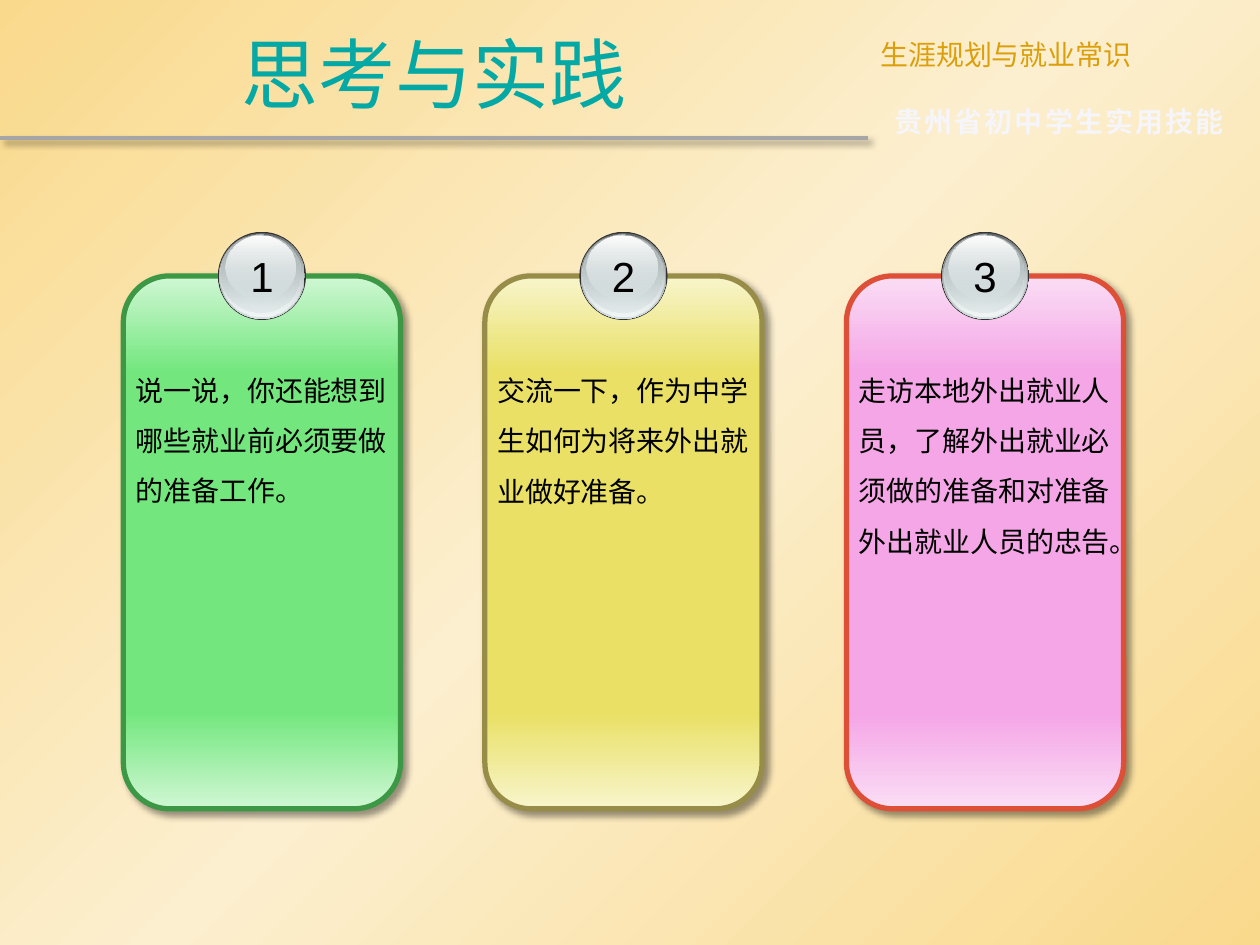
from lxml.etree import SubElement
from pptx import Presentation
from pptx.dml.color import RGBColor
from pptx.enum.shapes import MSO_CONNECTOR, MSO_SHAPE
from pptx.enum.text import MSO_ANCHOR, MSO_AUTO_SIZE, PP_ALIGN
from pptx.oxml.ns import qn
from pptx.util import Pt

CHINESE_FONT = "Noto Sans CJK SC"
BLACK = RGBColor(0x00, 0x00, 0x00)
WHITE = RGBColor(0xFF, 0xFF, 0xFF)
TEAL = RGBColor(0x04, 0xA8, 0xA4)
AMBER = RGBColor(0xDC, 0x9F, 0x0C)
PALE = RGBColor(0xF5, 0xF5, 0xFA)
RULE_GRAY = RGBColor(0xA6, 0xA6, 0xA6)
SAND = RGBColor(0xF9, 0xD9, 0x8C)
CREAM = RGBColor(0xFC, 0xEF, 0xCF)
RIM = RGBColor(0x33, 0x33, 0x33)
STEEL = RGBColor(0x63, 0x68, 0x69)
SILVER = RGBColor(0xAA, 0xB2, 0xB3)
MIST = RGBColor(0xD6, 0xE1, 0xE2)
FROST = RGBColor(0xF1, 0xF5, 0xF5)
LIGHT_GREEN = RGBColor(0xD0, 0xF7, 0xD4)
GREEN = RGBColor(0x73, 0xE7, 0x7E)
DARK_GREEN = RGBColor(0x3C, 0x98, 0x44)
LIGHT_YELLOW = RGBColor(0xF8, 0xF5, 0xCC)
YELLOW = RGBColor(0xE9, 0xE0, 0x65)
OLIVE = RGBColor(0x97, 0x8D, 0x48)
LIGHT_PINK = RGBColor(0xFB, 0xDD, 0xF5)
PINK = RGBColor(0xF4, 0xA6, 0xE6)
RED = RGBColor(0xDD, 0x4F, 0x37)


def set_gradient(fill, element, angle, stops):
    fill.gradient()
    fill.gradient_angle = 360 - angle
    stop_list = element.find(".//" + qn("a:gsLst"))
    for old_stop in list(stop_list):
        stop_list.remove(old_stop)
    for position, color, opacity in stops:
        stop = SubElement(stop_list, qn("a:gs"), pos=str(position * 1000))
        color_element = SubElement(stop, qn("a:srgbClr"), val=str(color))
        if opacity < 100:
            SubElement(color_element, qn("a:alpha"), val=str(opacity * 1000))


def write_text(shape, text, color, size, frame_format, paragraph_format, font_name=CHINESE_FONT):
    frame = shape.text_frame
    frame.text = text
    paragraph = frame.paragraphs[0]
    run = paragraph.runs[0]
    run.font.color.rgb = color
    font_format = {"size": Pt(size), "name": font_name}
    for target, values in (
        (frame, {"word_wrap": True, "auto_size": MSO_AUTO_SIZE.SHAPE_TO_FIT_TEXT, **frame_format}),
        (paragraph, paragraph_format),
        (run.font, font_format),
    ):
        for name, value in values.items():
            setattr(target, name, value)
    properties = run._r.get_or_add_rPr()
    SubElement(properties, qn("a:ea"), typeface=font_name)
    return run


presentation = Presentation()
presentation.slide_width = Pt(720)
presentation.slide_height = Pt(540)
slide = presentation.slides.add_slide(presentation.slide_layouts[5])
set_gradient(slide.background.fill, slide.element, 45,
             [(0, SAND, 100), (50, CREAM, 100), (100, SAND, 100)])

title = slide.shapes.title
title_box = {"left": Pt(0), "top": Pt(5), "width": Pt(496), "height": Pt(73.5)}
for name, value in title_box.items():
    setattr(title, name, value)
write_text(title, "思考与实践", TEAL, 44,
           {"auto_size": MSO_AUTO_SIZE.NONE, "vertical_anchor": MSO_ANCHOR.MIDDLE},
           {"alignment": PP_ALIGN.CENTER})

rule = slide.shapes.add_connector(MSO_CONNECTOR.STRAIGHT, Pt(0), Pt(79), Pt(496), Pt(79))
rule.line.color.rgb = RULE_GRAY
rule.line.width = Pt(2.25)
shadowed = [rule]

course = slide.shapes.add_textbox(Pt(496), Pt(18), Pt(224), Pt(26.6))
write_text(course, "生涯规划与就业常识", AMBER, 16, {}, {"alignment": PP_ALIGN.JUSTIFY})
series = slide.shapes.add_textbox(Pt(504), Pt(56), Pt(216), Pt(26.6))
series_run = write_text(series, "贵州省初中学生实用技能", PALE, 16, {}, {})
series_run.font.bold = True
series_run._r.get_or_add_rPr().set("spc", "130")

CARD_LEFT, CARD_STEP, CARD_TOP, CARD_WIDTH, CARD_HEIGHT = 70.5, 206.6, 157.7, 158.4, 304.5
CARDS = [
    ("说一说，你还能想到哪些就业前必须要做的准备工作。", LIGHT_GREEN, GREEN, DARK_GREEN, 91.4),
    ("交流一下，作为中学生如何为将来外出就业做好准备。", LIGHT_YELLOW, YELLOW, OLIVE, 94.3),
    ("走访本地外出就业人员，了解外出就业必须做的准备和对准备外出就业人员的忠告。",
     LIGHT_PINK, PINK, RED, 120.2),
]
BADGE_LAYERS = [
    (54, 132.5, 50.4, 50.4, [(0, RIM, 100), (100, RIM, 100)]),
    (54.7, 133.2, 49, 49, [(0, STEEL, 100), (100, MIST, 100)]),
    (55.2, 133.2, 47.5, 47.5, [(0, MIST, 0), (100, FROST, 100)]),
    (55.8, 133.9, 45.4, 44.6, [(0, SILVER, 100), (100, MIST, 48)]),
    (58.3, 134.6, 40.3, 36, [(0, WHITE, 100), (100, MIST, 38)]),
]

for index, (text, edge_color, body_color, border_color, text_height) in enumerate(CARDS):
    left = CARD_LEFT + index * CARD_STEP
    shapes = slide.shapes.add_group_shape().shapes

    card = shapes.add_shape(MSO_SHAPE.ROUNDED_RECTANGLE, Pt(left), Pt(CARD_TOP),
                            Pt(CARD_WIDTH), Pt(CARD_HEIGHT))
    set_gradient(card.fill, card.element, 90,
                 [(0, edge_color, 100), (18, body_color, 100),
                  (82, body_color, 100), (100, edge_color, 100)])
    card.line.color.rgb = border_color
    card.line.width = Pt(3)
    shadowed.append(card)

    body = shapes.add_textbox(Pt(left), Pt(200.2), Pt(CARD_WIDTH), Pt(text_height))
    write_text(body, text, BLACK, 16, {}, {"line_spacing": 1.5})

    for offset, top, width, height, stops in BADGE_LAYERS:
        disc = shapes.add_shape(MSO_SHAPE.OVAL, Pt(left + offset), Pt(top), Pt(width), Pt(height))
        set_gradient(disc.fill, disc.element, 90, stops)
        disc.line.fill.background()
        disc.shadow.inherit = False

    number = shapes.add_textbox(Pt(left + 65.2), Pt(139.7), Pt(28), Pt(36))
    write_text(number, str(index + 1), BLACK, 24, {"word_wrap": False},
               {"alignment": PP_ALIGN.CENTER}, "Arial")

for shape in shadowed:
    effects = SubElement(shape.element.spPr, qn("a:effectLst"))
    shadow = SubElement(effects, qn("a:outerShdw"), blurRad=str(Pt(4)), dist=str(Pt(3)),
                        dir=str(45 * 60000), algn="tl", rotWithShape="0")
    shadow_color = SubElement(shadow, qn("a:srgbClr"), val=str(BLACK))
    SubElement(shadow_color, qn("a:alpha"), val="40000")

presentation.save("out.pptx")
